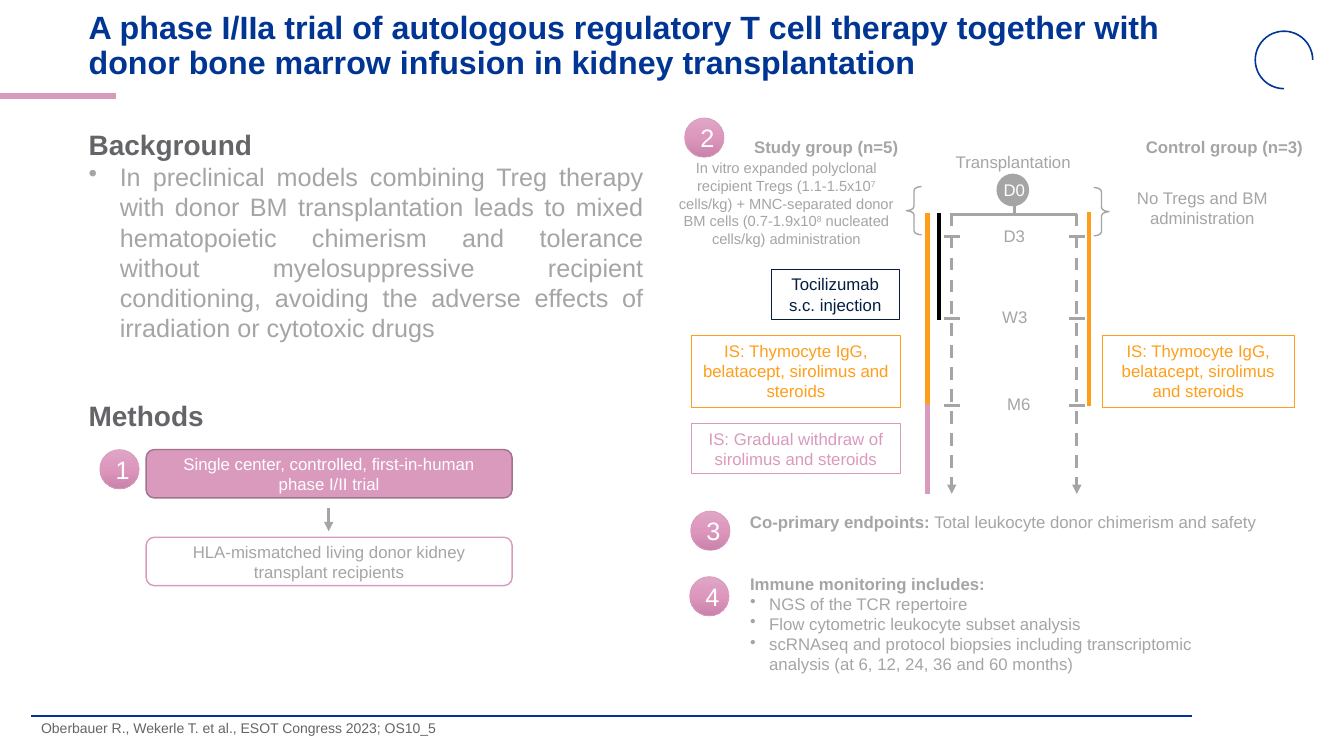
from copy import deepcopy

from pptx import Presentation
from pptx.dml.color import RGBColor
from pptx.enum.dml import MSO_LINE
from pptx.enum.shapes import MSO_CONNECTOR, MSO_SHAPE as Geometry
from pptx.enum.text import MSO_ANCHOR as Anchor, MSO_AUTO_SIZE, PP_ALIGN as Align
from pptx.oxml.ns import qn
from pptx.oxml.xmlchemy import OxmlElement
from pptx.util import Pt

PX = 9144
NAVY, PINK, GREY, DARK = "003594", "DA9ABD", "A5A5A5", "636569"
ORANGE, INK, WHITE, BLACK = "FF9E1B", "041E42", "FFFFFF", "000000"
BOLD = {"bold": True}
RAISED = {"baseline": "30000"}

TITLE = ("A phase I/IIa trial of autologous regulatory T cell therapy together "
         "with donor bone marrow infusion in kidney transplantation")
TITLE_AREA = (78, 10, 1150, 73)
CITATION = "Oberbauer R., Wekerle T. et al., ESOT Congress 2023; OS10_5"
BACKGROUND = ("In preclinical models combining Treg therapy with donor BM transplantation "
              "leads to mixed hematopoietic chimerism and tolerance without myelosuppressive "
              "recipient conditioning, avoiding the adverse effects of irradiation or "
              "cytotoxic drugs")
HEADING = {"size": 20, "color": DARK, "bold": True}
TREG_DOSE = [
    ("In vitro expanded polyclonal recipient Tregs (1.1-1.5x10", {}), ("7", RAISED),
    (" cells/kg) + MNC-separated donor BM cells (0.7-1.9x10", {}), ("8", RAISED),
    (" nucleated cells/kg) administration", {}),
]
MONITORING = [
    "NGS of the TCR repertoire",
    "Flow cytometric leukocyte subset analysis",
    "scRNAseq and protocol biopsies including transcriptomic analysis "
    "(at 6, 12, 24, 36 and 60 months)",
]
IMMUNOSUPPRESSION = "IS: Thymocyte IgG, belatacept, sirolimus and steroids"

BADGES = [("1", 99, 446), ("2", 679, 117), ("3", 685, 507), ("4", 684, 572)]
BADGE_SIZE = 39
BADGE_GRADIENT = [(0, "DFA6C5"), (0.5, "DD97BD"), (1, "C982A9")]

METHOD_STEPS = [
    (["Single center, controlled, first-in-human", "phase I/II trial"],
     446, PINK, "A1728C", WHITE),
    (["HLA-mismatched living donor kidney transplant recipients"],
     533, None, PINK, GREY),
]
DRUG_BOXES = [
    (IMMUNOSUPPRESSION, (686, 333, 207, 71), ORANGE),
    ("Tocilizumab s.c. injection", (765, 267, 127, 50), INK),
    ("IS: Gradual withdraw of sirolimus and steroids", (686, 420, 207, 50), PINK),
    (IMMUNOSUPPRESSION, (1093, 333, 191, 71), ORANGE),
]
LABELS = [
    ("Transplantation", (927, 146, 156, 30), {}),
    ("D0", (983, 173, 46, 30), {"color": WHITE}),
    ("D3", (982, 219, 48, 30), {}),
    ("W3", (981, 299, 51, 30), {}),
    ("M6", (985, 386, 51, 30), {}),
    ("No Tregs and BM administration", (1097, 181, 191, 50), {}),
    ("Study group (n=5)", (729, 131, 181, 30), BOLD),
    ("Control group (n=3)", (1111, 131, 207, 30), BOLD),
]
ARMS = [944, 1068]
VISITS = [235, 316, 402]
TICK = 8
TREATMENT_BARS = [(931, 211, 317, BLACK), (920, 211, 404, ORANGE),
                  (920, 401, 490, PINK), (1080, 210, 403, ORANGE)]
BRACES = [(Geometry.LEFT_BRACE, 899, 185), (Geometry.RIGHT_BRACE, 1085, 186)]
RULES = [(0, 95, 115, 95, PINK, 4.5), (31, 710, 1182, 710, NAVY, 1.5)]


def rgb(color):
    return RGBColor.from_string(color)


def emu(area):
    return [value * PX for value in area]


def write(frame, paragraphs, anchor=Anchor.TOP, **base):
    formats = {"word_wrap": True, "auto_size": MSO_AUTO_SIZE.NONE, "vertical_anchor": anchor}
    for key, value in formats.items():
        setattr(frame, key, value)
    for index, (runs, style) in enumerate(paragraphs):
        paragraph = frame.paragraphs[0] if index == 0 else frame.add_paragraph()
        look = {"size": 12, "color": GREY, "bold": False, "align": Align.LEFT,
                "spacing": 1.0, "indent": 0, **base, **style}
        paragraph.alignment = look["align"]
        paragraph.line_spacing = look["spacing"]
        if look["indent"]:
            props = paragraph._p.get_or_add_pPr()
            props.set("marL", str(look["indent"] * PX))
            props.set("indent", str(-look["indent"] * PX))
            bullet = OxmlElement("a:buChar")
            bullet.set("char", "•")
            props.append(bullet)
        for text, extra in ([(runs, {})] if isinstance(runs, str) else runs):
            run = paragraph.add_run()
            run.text = text
            mark = {**look, **extra}
            for key, value in {"name": "Arial", "size": Pt(mark["size"]),
                               "bold": mark["bold"]}.items():
                setattr(run.font, key, value)
            run.font.color.rgb = rgb(mark["color"])
            if "baseline" in mark:
                run._r.get_or_add_rPr().set("baseline", mark["baseline"])


def add_text(slide, area, paragraphs, **base):
    write(slide.shapes.add_textbox(*emu(area)).text_frame, paragraphs, **base)


def add_figure(slide, geometry, area, line, width, fill=None):
    figure = slide.shapes.add_shape(geometry, *emu(area))
    figure.shadow.inherit = False
    figure.line.color.rgb = rgb(line)
    figure.line.width = Pt(width)
    if fill:
        figure.fill.solid()
        figure.fill.fore_color.rgb = rgb(fill)
    else:
        figure.fill.background()
    return figure


def add_line(slide, x1, y1, x2, y2, color=GREY, width=2.25, arrow=False, dashed=False):
    link = slide.shapes.add_connector(MSO_CONNECTOR.STRAIGHT, *emu((x1, y1, x2, y2)))
    link.line.color.rgb = rgb(color)
    link.line.width = Pt(width)
    if dashed:
        link.line.dash_style = MSO_LINE.DASH
    if arrow:
        head = OxmlElement("a:tailEnd")
        head.set("type", "triangle")
        link.line._get_or_add_ln().append(head)
    link._element.spPr.append(OxmlElement("a:effectLst"))


def add_badge(slide, number, left, top):
    badge = add_figure(slide, Geometry.OVAL, (left, top, BADGE_SIZE, BADGE_SIZE), PINK, 0.5)
    badge.fill.gradient()
    badge.fill.gradient_angle = 270
    stops = badge._element.spPr.find(".//" + qn("a:gsLst"))
    stops.insert(1, deepcopy(stops[0]))
    for stop, (position, color) in zip(badge.fill.gradient_stops, BADGE_GRADIENT):
        stop.position = position
        stop.color.rgb = rgb(color)
    write(badge.text_frame, [(number, {})], Anchor.MIDDLE, size=18, color=WHITE,
          align=Align.CENTER)


def add_timeline(slide):
    add_line(slide, 942, 213, 1068, 213)
    add_line(slide, 1006, 213, 1006, 197)
    for arm in ARMS:
        add_line(slide, arm, 212, arm, 490, arrow=True, dashed=True)
        for visit in VISITS:
            add_line(slide, arm - TICK, visit, arm + TICK, visit)
    for x, top, bottom, color in TREATMENT_BARS:
        add_line(slide, x, top, x, bottom, color, 3)
    for geometry, left, top in BRACES:
        brace = add_figure(slide, geometry, (left, top, 15, 48), GREY, 1)
        brace.adjustments[0] = 0.28
    add_figure(slide, Geometry.OVAL, (989, 173, 31, 31), GREY, 1, GREY)
    for text, area, color in DRUG_BOXES:
        box = add_figure(slide, Geometry.RECTANGLE, area, color, 0.75)
        write(box.text_frame, [(text, {})], color=color, align=Align.CENTER)
    for text, area, style in LABELS:
        add_text(slide, area, [(text, style)], align=Align.CENTER)
    add_text(slide, (663, 153, 234, 116), [(TREG_DOSE, {})], size=10.5, align=Align.CENTER)


def main():
    deck = Presentation()
    deck.slide_width, deck.slide_height = emu((1333, 750))
    slide = deck.slides.add_slide(deck.slide_layouts[5])
    title = slide.shapes.title
    title.left, title.top, title.width, title.height = emu(TITLE_AREA)
    write(title.text_frame, [(TITLE, {})], Anchor.MIDDLE, size=23, color=NAVY, bold=True,
          spacing=0.9)
    for rule in RULES:
        add_line(slide, *rule)
    arc = add_figure(slide, Geometry.ARC, (1245, 31, 57, 57), NAVY, 1.13)
    arc.adjustments[0], arc.adjustments[1] = 54, 0
    add_text(slide, (31, 711, 784, 34), [(CITATION, {})], size=10, color=DARK, spacing=0.9)
    add_text(slide, (78, 122, 570, 226),
             [("Background", HEADING), (BACKGROUND, {"size": 18, "indent": 31})],
             align=Align.JUSTIFY)
    add_text(slide, (78, 390, 143, 44), [("Methods", HEADING)], align=Align.JUSTIFY)
    for lines, top, fill, line, color in METHOD_STEPS:
        step = add_figure(slide, Geometry.FLOWCHART_ALTERNATE_PROCESS, (145, top, 363, 48),
                          line, 1, fill)
        write(step.text_frame, [(text, {}) for text in lines], Anchor.MIDDLE, color=color,
              align=Align.CENTER)
    add_line(slide, 326, 504, 326, 527, arrow=True)
    add_timeline(slide)
    for badge in BADGES:
        add_badge(slide, *badge)
    endpoints = [("Co-primary endpoints:", BOLD),
                 (" Total leukocyte donor chimerism and safety", {})]
    add_text(slide, (734, 503, 556, 30), [(endpoints, {})])
    add_text(slide, (734, 564, 515, 111), [("Immune monitoring includes:", BOLD)]
             + [(item, {"indent": 19}) for item in MONITORING])
    deck.save("out.pptx")


if __name__ == "__main__":
    main()
